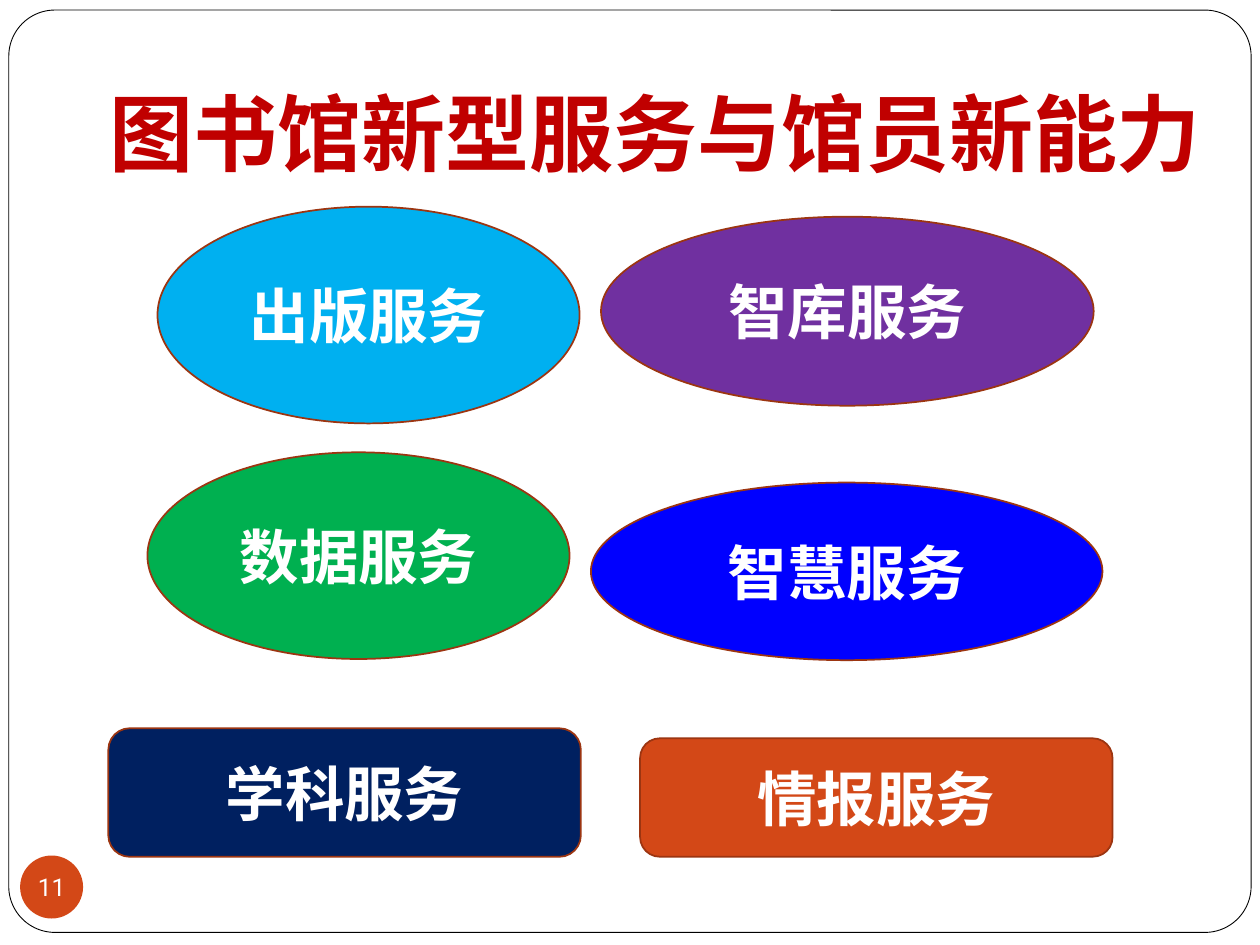
from dataclasses import dataclass

from pptx import Presentation
from pptx.dml.color import RGBColor
from pptx.enum.shapes import MSO_SHAPE
from pptx.enum.text import MSO_ANCHOR, MSO_AUTO_SIZE, PP_ALIGN
from pptx.util import Inches, Pt


@dataclass(frozen=True)
class Theme:
    text_font: str = "Times New Roman"
    number_font: str = "Roboto"
    title_size: int = 48
    service_size: int = 34
    number_size: int = 14
    title: str = "C00000"
    white: str = "FFFFFF"
    frame_line: str = "000000"
    service_line: str = "9C3511"
    accent: str = "D34817"


THEME = Theme()
TITLE = "图书馆新型服务与馆员新能力"
TITLE_BOX = (0.55, 0.6, 9.3, 1.65)
FRAME_BOX = (0.07, 0.08, 9.86, 7.32)
NUMBER = "11"
NUMBER_BOX = (0.16, 6.79, 0.5, 0.5)
OVAL, ROUNDED = MSO_SHAPE.OVAL, MSO_SHAPE.ROUNDED_RECTANGLE
SERVICES = [
    ("智库服务", OVAL, "7030A0", (4.77, 1.72, 3.91, 1.5)),
    ("出版服务", OVAL, "00B0F0", (1.25, 1.64, 3.35, 1.72)),
    ("学科服务", ROUNDED, "002060", (0.86, 5.78, 3.75, 1.02)),
    ("智慧服务", OVAL, "0000FF", (4.69, 3.83, 4.06, 1.41)),
    ("情报服务", ROUNDED, THEME.accent, (5.08, 5.86, 3.75, 0.94)),
    ("数据服务", OVAL, "00B050", (1.17, 3.59, 3.35, 1.64)),
]


def color(value):
    return RGBColor.from_string(value)


def add_shape(slide, kind, box, fill, line=None, width=1):
    shape = slide.shapes.add_shape(kind, *map(Inches, box))
    shape.shadow.inherit = False
    shape.fill.solid()
    shape.fill.fore_color.rgb = color(fill)
    if line:
        shape.line.color.rgb = color(line)
        shape.line.width = Pt(width)
    else:
        shape.line.fill.background()
    return shape


def write(shape, text, size, text_color, font=THEME.text_font, bold=True, anchor=MSO_ANCHOR.MIDDLE):
    frame = shape.text_frame
    frame.text = text
    frame.vertical_anchor = anchor
    paragraph = frame.paragraphs[0]
    paragraph.alignment = PP_ALIGN.CENTER
    paragraph.font.name = font
    paragraph.font.size = Pt(size)
    paragraph.font.bold = bold
    paragraph.font.color.rgb = color(text_color)
    return frame


def add_title(slide):
    title = slide.shapes.title
    title.left, title.top, title.width, title.height = map(Inches, TITLE_BOX)
    frame = write(title, TITLE, THEME.title_size, THEME.title, anchor=MSO_ANCHOR.TOP)
    frame.auto_size = MSO_AUTO_SIZE.NONE
    frame.word_wrap = True


def add_frame(slide):
    frame = add_shape(slide, ROUNDED, FRAME_BOX, THEME.white, THEME.frame_line, 0.5)
    frame.adjustments[0] = 0.05
    slide.shapes.title._element.addprevious(frame._element)


def add_number(slide):
    badge = add_shape(slide, OVAL, NUMBER_BOX, THEME.accent)
    frame = write(badge, NUMBER, THEME.number_size, THEME.white, THEME.number_font, bold=False)
    frame.margin_left = frame.margin_right = frame.margin_top = frame.margin_bottom = 0
    frame.word_wrap = False


def main():
    presentation = Presentation()
    presentation.slide_width, presentation.slide_height = Inches(10), Inches(7.5)
    slide = presentation.slides.add_slide(presentation.slide_layouts[5])
    add_title(slide)
    add_frame(slide)
    add_number(slide)
    for text, kind, fill, box in SERVICES:
        shape = add_shape(slide, kind, box, fill, THEME.service_line)
        write(shape, text, THEME.service_size, THEME.white)
    presentation.save("out.pptx")


if __name__ == "__main__":
    main()
